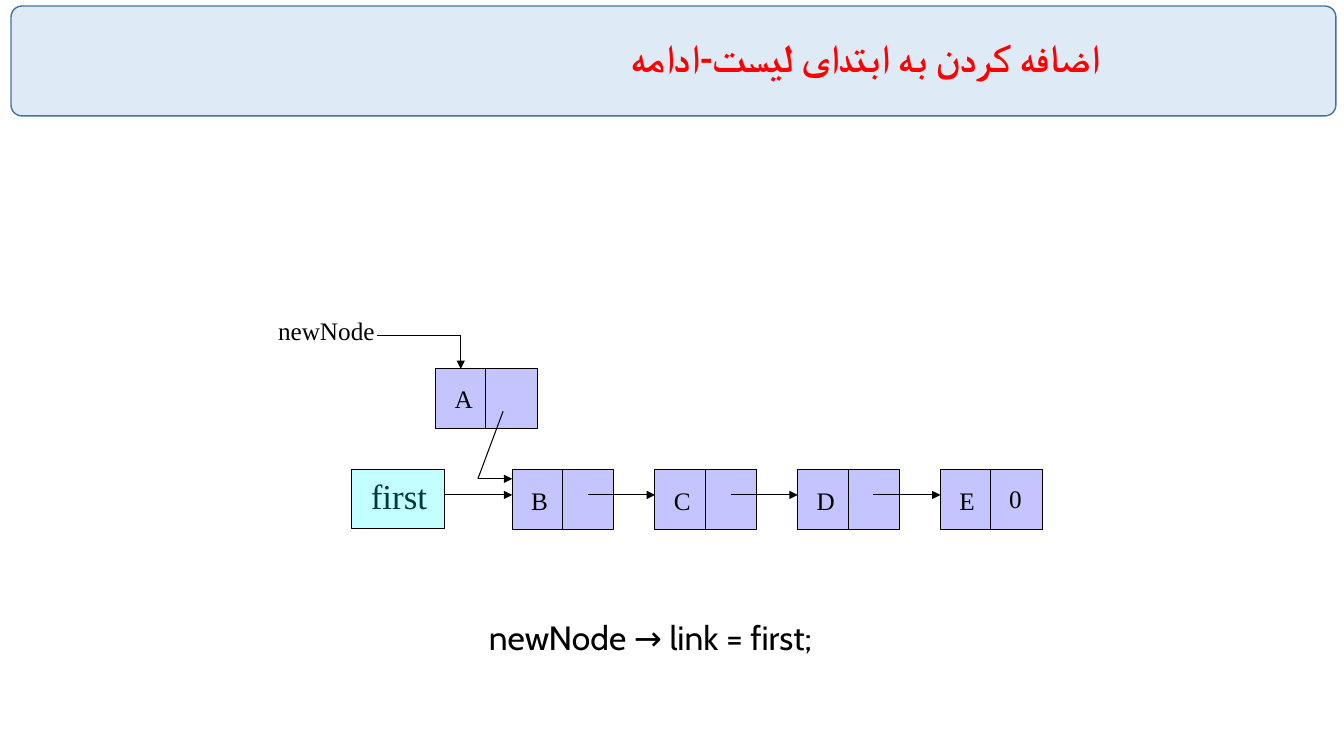
from dataclasses import dataclass

import pptx
import pptx.dml.color
import pptx.enum.shapes
import pptx.enum.text
import pptx.oxml.ns
import pptx.util
from lxml import etree

Inches = pptx.util.Inches
Pt = pptx.util.Pt
qn = pptx.oxml.ns.qn
MSO_SHAPE = pptx.enum.shapes.MSO_SHAPE

COLORS = {
    "banner": "DEEBF7",
    "banner_line": "43739E",
    "title": "FF0000",
    "node": "0000FF",
    "pointer": "00FFFF",
    "ink": "000000",
}
SERIF = "Times New Roman"
NODE_W, NODE_H = 1.01, 0.59
LIST_X, LIST_Y, LIST_STEP = 5.08, 4.66, 1.416
LINK_Y = LIST_Y + 0.25


@dataclass
class Label:
    text: str
    x: float
    y: float
    w: float
    h: float = 0.4
    size: float = 18
    font: str = SERIF


@dataclass
class Node:
    text: str
    x: float
    y: float
    text_dy: float
    text_w: float = 0.37


@dataclass
class Line:
    x1: float
    y1: float
    x2: float
    y2: float
    arrow: bool = False


def rgb(name: str):
    return pptx.dml.color.RGBColor.from_string(COLORS[name])


def add_box(s, kind, x: float, y: float, w: float, h: float, fill: str,
            line: str = "ink", width: float = 0.75, alpha: int = 100):
    sp = s.shapes.add_shape(kind, Inches(x), Inches(y), Inches(w), Inches(h))
    sp.shadow.inherit = False
    sp.fill.solid()
    sp.fill.fore_color.rgb = rgb(fill)
    sp.line.color.rgb = rgb(line)
    sp.line.width = Pt(width)
    if alpha < 100:
        color = sp.element.spPr.find(qn("a:solidFill"))[0]
        etree.SubElement(color, qn("a:alpha"), val=str(alpha * 1000))
    return sp


def add_line(s, line: Line) -> None:
    c = s.shapes.add_connector(
        pptx.enum.shapes.MSO_CONNECTOR.STRAIGHT,
        Inches(line.x1), Inches(line.y1), Inches(line.x2), Inches(line.y2))
    c.line.color.rgb = rgb("ink")
    c.line.width = Pt(0.75)
    if line.arrow:
        ln = c.element.spPr.find(qn("a:ln"))
        etree.SubElement(ln, qn("a:tailEnd"), type="triangle")
    etree.SubElement(c.element.spPr, qn("a:effectLst"))


def add_label(s, label: Label) -> None:
    sp = s.shapes.add_textbox(Inches(label.x), Inches(label.y),
                              Inches(label.w), Inches(label.h))
    tf = sp.text_frame
    tf.text = label.text
    tf.word_wrap = False
    tf.auto_size = pptx.enum.text.MSO_AUTO_SIZE.SHAPE_TO_FIT_TEXT
    font = tf.paragraphs[0].runs[0].font
    font.name = label.font
    font.size = Pt(label.size)
    font.color.rgb = rgb("ink")


def add_node(s, node: Node) -> None:
    add_box(s, MSO_SHAPE.RECTANGLE, node.x, node.y, NODE_W, NODE_H, "node", alpha=23)
    middle = node.x + 0.5
    add_line(s, Line(middle, node.y, middle, node.y + NODE_H))
    add_label(s, Label(node.text, node.x + 0.09, node.y + node.text_dy, node.text_w))


def add_title(s, text: str) -> None:
    title = s.shapes.title
    title.left, title.top = Inches(2.75), Inches(0)
    title.width, title.height = Inches(8.25), Inches(1.18)
    tf = title.text_frame
    tf.text = text
    tf.auto_size = pptx.enum.text.MSO_AUTO_SIZE.NONE
    tf.vertical_anchor = pptx.enum.text.MSO_ANCHOR.MIDDLE
    p = tf.paragraphs[0]
    p.alignment = pptx.enum.text.PP_ALIGN.RIGHT
    p.line_spacing = 0.9
    p.element.get_or_add_pPr().set("rtl", "1") if hasattr(p, "element") else p._p.get_or_add_pPr().set("rtl", "1")
    r = p.runs[0]
    r.font.name = "Calibri"
    r.font.size = Pt(28)
    r.font.bold = True
    r.font.color.rgb = rgb("title")
    etree.SubElement(r.font._element, qn("a:cs"), typeface="Calibri")


def main() -> None:
    prs = pptx.Presentation()
    prs.slide_width, prs.slide_height = Inches(13.33), Inches(7.5)
    s = prs.slides.add_slide(prs.slide_layouts[5])

    banner = add_box(s, MSO_SHAPE.ROUNDED_RECTANGLE, 0.11, 0.06, 13.14, 1.09,
                     "banner", "banner_line", 1)
    banner.adjustments[0] = 0.1
    s.shapes.title.element.addprevious(banner.element)
    add_title(s, "اضافه کردن به ابتدای ليست-ادامه")

    list_nodes = [Node(text, LIST_X + i * LIST_STEP, LIST_Y, 0.11)
                  for i, text in enumerate("BCDE")]
    for node in [Node("A", 4.32, 3.66, 0.09), *list_nodes]:
        add_node(s, node)

    links = [Line(a.x + 0.75, LINK_Y, b.x, LINK_Y, True)
             for a, b in zip(list_nodes, list_nodes[1:])]
    lines = [
        *links,
        Line(4.41, LINK_Y, LIST_X, LINK_Y, True),
        Line(3.74, 3.33, 4.57, 3.33),
        Line(4.57, 3.33, 4.57, 3.66, True),
        Line(4.99, 4.08, 4.74, 4.75),
        Line(4.74, 4.75, LIST_X, 4.75, True),
    ]
    for line in lines:
        add_line(s, line)

    labels = [
        Label("first", 3.58, LIST_Y, 0.76, 0.52, 25),
        Label("0", 9.91, 4.75, 0.33),
        Label("newNode", 2.66, 3.08, 1.16),
        Label("newNode → link = first;", 4.75, 6.07, 3.74, 0.5, 24, "Cabin"),
    ]
    for label in labels:
        add_label(s, label)
    add_box(s, MSO_SHAPE.RECTANGLE, 3.49, LIST_Y, 0.92, 0.58, "pointer", alpha=23)

    prs.save("out.pptx")


if __name__ == "__main__":
    main()
